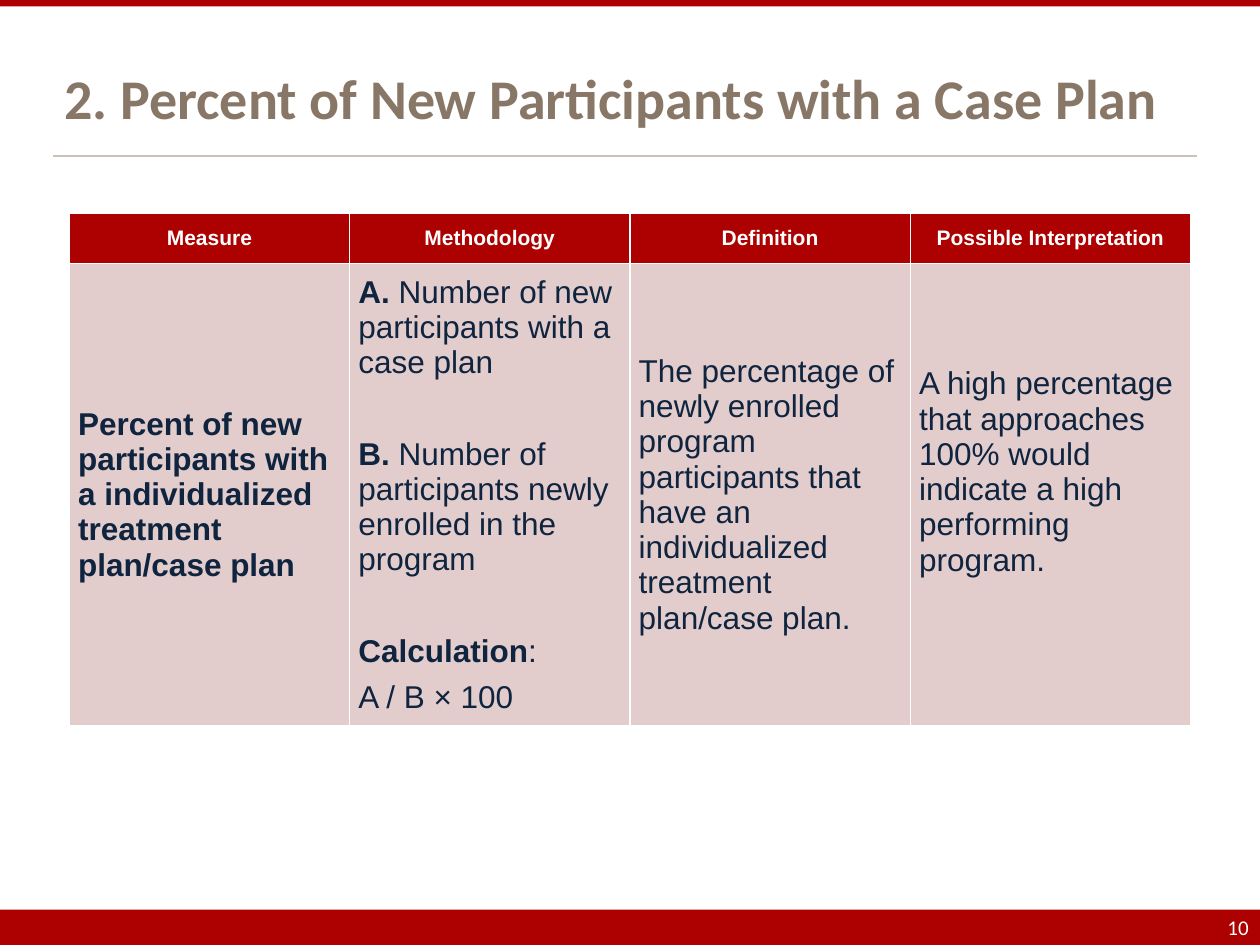
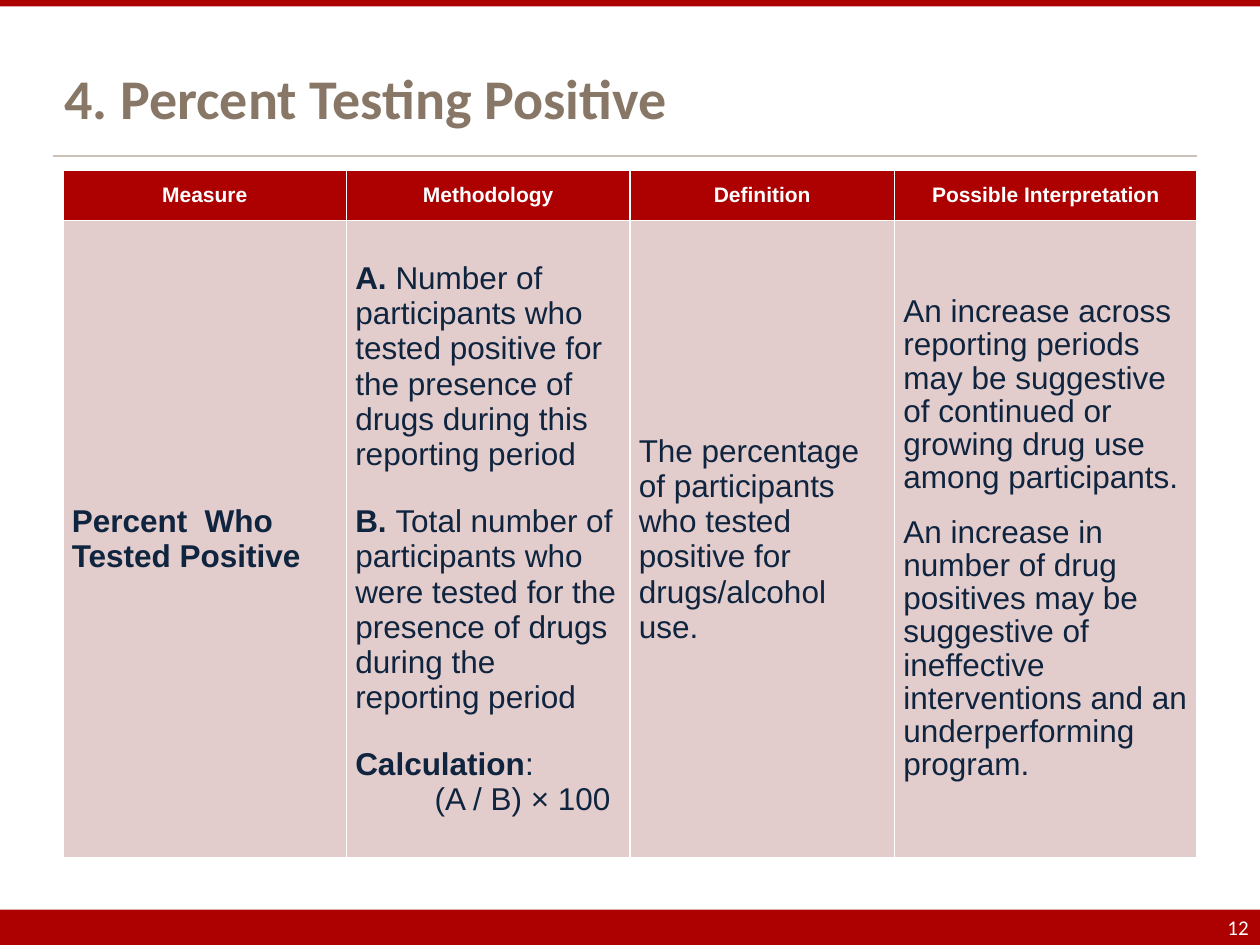
import pptx
import pptx.util
import pptx.dml.color
import pptx.enum.shapes
import pptx.enum.text
import pptx.oxml
import pptx.oxml.ns
from lxml import etree

Pt = pptx.util.Pt
Inches = pptx.util.Inches
Align = pptx.enum.text.PP_ALIGN
Anchor = pptx.enum.text.MSO_ANCHOR

WIDTH, HEIGHT = Inches(10), Inches(7.5)
COLS, ROWS = 100, 75
HUES = {
    "red": "AD0101",
    "pink": "E3CCCC",
    "navy": "0F243E",
    "taupe": "887766",
    "sand": "CBC2B9",
    "white": "FFFFFF",
}
PAGE = (0, 0, COLS, ROWS)
HEADS = ["Measure", "Methodology", "Definition", "Possible Interpretation"]
HEAD_ROWS = 4


def hue(name):
    return pptx.dml.color.RGBColor.from_string(HUES[name])


def place(box):
    left, top, width, height = box
    col, row = WIDTH / COLS, HEIGHT / ROWS
    return [round(n) for n in (left * col, top * row, width * col, height * row)]


def write(frame, text, font="Arial", size=18, color="navy", bold=False,
          align=Align.LEFT, before=0, after=0, line=None, indent=0, more=False):
    para = frame.add_paragraph() if more else frame.paragraphs[0]
    if indent:
        para._p.get_or_add_pPr().set("marL", str(Inches(indent)))
    para.alignment = align
    para.space_before, para.space_after = Pt(before), Pt(after)
    if line:
        para.line_spacing = Pt(line)
    lead, mark, rest = text.partition("|")
    parts = [(lead, True), (rest, False)] if mark else [(text, bold)]
    for words, heavy in parts:
        run = para.add_run()
        run.text = words
        run.font.name, run.font.size = font, Pt(size)
        run.font.bold = heavy
        run.font.color.rgb = hue(color)


def label(slide, box, text, anchor, **style):
    frame = slide.shapes.add_textbox(*place(box)).text_frame
    frame.word_wrap = True
    frame.vertical_anchor = anchor
    frame.margin_left = frame.margin_right = Inches(0.09)
    frame.margin_top = frame.margin_bottom = Inches(0.04)
    write(frame, text, font="Calibri", **style)


def band(slide, box):
    shape = slide.shapes.add_shape(
        pptx.enum.shapes.MSO_SHAPE.RECTANGLE, *place(box))
    shape.shadow.inherit = False
    shape.fill.solid()
    shape.fill.fore_color.rgb = hue("red")
    shape.line.fill.background()


def footer(slide, box, number):
    left, top, width, height = box
    band(slide, box)
    label(slide, (left + width - 6.2, top, 6.2, height), number,
          Anchor.MIDDLE, size=12, color="white", align=Align.RIGHT)


def header(slide, box, title):
    left, top, width, height = box
    band(slide, (left, top, width, 0.5))
    start, span, base = left + 4.2, width - 9.2, top + height
    label(slide, (start, top + 2.5, span, height - 4.1), title,
          Anchor.BOTTOM, size=32, color="taupe", bold=True)
    x, y, run, _ = place((start, base, span, 0))
    rule = slide.shapes.add_connector(
        pptx.enum.shapes.MSO_CONNECTOR.STRAIGHT, x, y, x + run, y)
    rule.line.color.rgb = hue("sand")
    rule.line.width = Pt(1.25)
    etree.SubElement(rule._element.spPr, pptx.oxml.ns.qn("a:effectLst"))


def paint(cell, color, pad=0):
    props = cell._tc.get_or_add_tcPr()
    for side in "LRTB":
        props.append(pptx.oxml.parse_xml(
            f'<a:ln{side} {pptx.oxml.ns.nsdecls("a")} w="{Pt(1)}"><a:solidFill>'
            f'<a:srgbClr val="{HUES["white"]}"/></a:solidFill></a:ln{side}>'))
    cell.fill.solid()
    cell.fill.fore_color.rgb = hue(color)
    cell.vertical_anchor = Anchor.MIDDLE
    cell.margin_left = cell.margin_right = Inches(0.07)
    cell.margin_top, cell.margin_bottom = 0, Pt(pad)


def matrix(slide, box, shares, body, pads):
    x, y, wide, high = place(box)
    table = slide.shapes.add_table(2, len(HEADS), x, y, wide, high).table
    table.horz_banding = False
    table.rows[0].height = place((0, 0, 0, HEAD_ROWS))[3]
    table.rows[1].height = high - table.rows[0].height
    for col, share in enumerate(shares):
        table.columns[col].width = round(wide * share / sum(shares))
        top, cell = table.cell(0, col), table.cell(1, col)
        paint(top, "red")
        write(top.text_frame, HEADS[col], size=12, color="white",
              bold=True, align=Align.CENTER, after=6)
        paint(cell, "pink", pads[col])
        for index, (text, style) in enumerate(body[col]):
            write(cell.text_frame, text, more=index > 0,
                  **{"after": 6, **style})


def build(deck, number, title, box, shares, body, pads=(0, 0, 0, 0)):
    slide = deck.slides.add_slide(deck.slide_layouts[6])
    left, top, width, height = PAGE
    footer(slide, (left, top + height - 2.8, width, 2.8), number)
    header(slide, (left, top, width, 12.4), title)
    matrix(slide, box, shares, body, pads)


def main():
    deck = pptx.Presentation()
    deck.slide_width, deck.slide_height = WIDTH, HEIGHT

    plan = [
        [("Percent of new participants with a individualized treatment "
          "plan/case plan", {"bold": True})],
        [("A. |Number of new participants with a case plan", {}),
         ("B. |Number of participants newly enrolled in the program",
          {"before": 26}),
         ("Calculation|:", {"before": 26}),
         ("A / B × 100", {})],
        [("The percentage of newly enrolled program participants that have "
          "an individualized treatment plan/case plan.", {})],
        [("A high percentage that approaches 100% would indicate a high "
          "performing program.", {})],
    ]
    build(deck, "10", "2. Percent of New Participants with a Case Plan",
          (5.5, 16.9, 89, 38.9), (1, 1, 1, 1), plan, (0, 0, 0, 26))

    tests = [
        [("Percent  Who Tested Positive", {"bold": True})],
        [("A. |Number of participants who tested positive for the presence "
          "of drugs during this reporting period", {}),
         ("B. |Total number of participants who were tested for the presence "
          "of drugs during the reporting period", {"before": 12}),
         ("Calculation|:", {"before": 12, "after": 0}),
         ("(A / B) × 100", {"indent": 0.63})],
        [("The percentage of participants who tested positive for "
          "drugs/alcohol use.", {})],
        [("An increase across reporting periods may be suggestive of "
          "continued or growing drug use among participants.", {"line": 19}),
         ("An increase in number of drug positives may be suggestive of "
          "ineffective interventions and an underperforming program.",
          {"line": 19, "before": 6})],
    ]
    build(deck, "12", "4. Percent Testing Positive",
          (5, 13.5, 90, 54.6), (2.25, 2.25, 2.1, 2.4), tests)

    deck.save("out.pptx")


if __name__ == "__main__":
    main()
